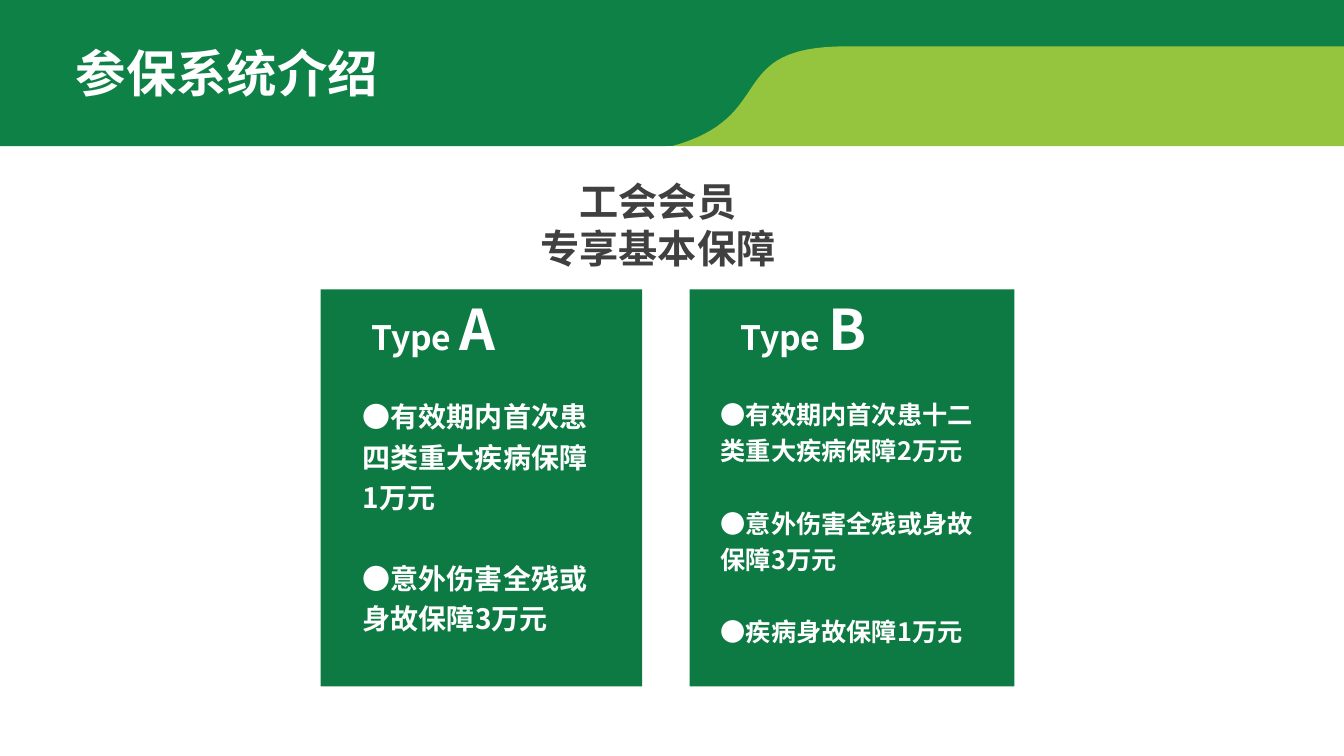
from pptx import Presentation
from pptx.dml.color import RGBColor
from pptx.enum.shapes import MSO_SHAPE
from pptx.enum.text import MSO_ANCHOR, MSO_AUTO_SIZE, PP_ALIGN
from pptx.util import Inches, Pt

RECT = MSO_SHAPE.RECTANGLE
TOP, MIDDLE = MSO_ANCHOR.TOP, MSO_ANCHOR.MIDDLE
NO_FIT = MSO_AUTO_SIZE.NONE
LEFT, CENTER = PP_ALIGN.LEFT, PP_ALIGN.CENTER

W, H = 13.33, 7.5
HEADER_H = 1.45
UNITS_PER_INCH = 1000
FONT = "Noto Sans CJK SC"
COLORS = {"header": "0E8146", "wave": "95C53E", "card": "0D7A43",
          "dark": "404040", "white": "FFFFFF"}
CARD_TOP, HEAD_H, BODY_H = 2.87, 0.77, 3.17
CARDS = [
    {"letter": "A", "left": 3.18, "width": 3.19, "size": 20,
     "text_box": (0.32, 2.53, 2.52),
     "items": ["●有效期内首次患四类重大疾病保障1万元",
               "●意外伤害全残或身故保障3万元"]},
    {"letter": "B", "left": 6.84, "width": 3.22, "size": 18,
     "text_box": (0.21, 2.8, 2.64),
     "items": ["●有效期内首次患十二类重大疾病保障2万元",
               "●意外伤害全残或身故保障3万元",
               "●疾病身故保障1万元"]},
]


def color(name):
    return RGBColor.from_string(COLORS[name])


def paint(sp, name):
    sp.shadow.inherit = False
    sp.fill.solid()
    sp.fill.fore_color.rgb = color(name)
    sp.line.fill.background()


def style(r, size, name="white", font=FONT):
    r.font.size = Pt(size)
    r.font.bold = True
    r.font.name = font
    r.font.color.rgb = color(name)


def add_rect(s, x, y, w, h):
    sp = s.shapes.add_shape(RECT, Inches(x), Inches(y), Inches(w), Inches(h))
    paint(sp, "card")
    return sp


def add_text(s, x, y, w, h, lines, size, name="white", align=LEFT, spacing=1.0, gap=0):
    sp = s.shapes.add_textbox(Inches(x), Inches(y), Inches(w), Inches(h))
    tf = sp.text_frame
    tf.word_wrap = True
    tf.vertical_anchor = TOP
    tf.text = "\n".join(lines)
    for i, p in enumerate(tf.paragraphs):
        p.alignment = align
        p.line_spacing = spacing
        p.space_before = Pt(gap if i else 0)
        style(p.runs[0], size, name)


def bezier(p0, p1, p2, p3, steps=32):
    points = []
    for i in range(1, steps + 1):
        t = i / steps
        u = 1 - t
        points.append(tuple(u**3 * a + 3 * u * u * t * b + 3 * u * t * t * c + t**3 * d
                            for a, b, c, d in zip(p0, p1, p2, p3)))
    return points


def add_outline(s, points, name):
    nodes = [(round(x * UNITS_PER_INCH), round(y * UNITS_PER_INCH)) for x, y in points]
    builder = s.shapes.build_freeform(*nodes[0], scale=Inches(1) / UNITS_PER_INCH)
    builder.add_line_segments(nodes[1:], close=True)
    paint(builder.convert_to_shape(), name)


def add_header(s, w, h):
    add_outline(s, [(0, 0), (w, 0), (w, 0.5), (8.27, 0.5), (8.09, 0.56)]
                + bezier((8.09, 0.56), (7.27, 0.86), (7.7, h), (6.55, h))
                + [(0, h)], "header")
    add_outline(s, [(8.39, 0.46), (w, 0.46), (w, h), (w / 2, h)]
                + bezier((w / 2, h), (7.73, 1.16), (7.17, 0.46), (8.39, 0.46)), "wave")
    title = s.shapes.title
    s.shapes._spTree.append(title._element)
    title.left, title.top = Inches(0.65), Inches(0.37)
    title.width, title.height = Inches(3.2), Inches(0.71)
    tf = title.text_frame
    tf.text = "参保系统介绍"
    tf.word_wrap = False
    tf.margin_right = 0
    tf.auto_size = NO_FIT
    tf.vertical_anchor = TOP
    p = tf.paragraphs[0]
    p.alignment = LEFT
    style(p.runs[0], 36, font="Arial")


def add_card(s, card, top):
    x, w = card["left"], card["width"]
    head = add_rect(s, x, top, w, HEAD_H)
    tf = head.text_frame
    tf.margin_left = Inches(0.5)
    tf.vertical_anchor = MIDDLE
    p = tf.paragraphs[0]
    p.alignment = LEFT
    for text, size in (("Type ", 24), (card["letter"], 40)):
        r = p.add_run()
        r.text = text
        style(r, size)
    body_top = top + HEAD_H
    add_rect(s, x, body_top, w, BODY_H)
    dx, text_w, text_h = card["text_box"]
    size = card["size"]
    add_text(s, x + dx, body_top + 0.21, text_w, text_h, card["items"], size,
             spacing=1.2, gap=size * 1.44)


def main():
    prs = Presentation()
    prs.slide_width, prs.slide_height = Inches(W), Inches(H)
    s = prs.slides.add_slide(prs.slide_layouts[5])
    add_header(s, W, HEADER_H)
    add_text(s, 4.24, 1.71, 4.57, 1.04, ["工会会员", "专享基本保障"], 28, "dark", CENTER)
    for card in CARDS:
        add_card(s, card, CARD_TOP)
    prs.save("out.pptx")


if __name__ == "__main__":
    main()
